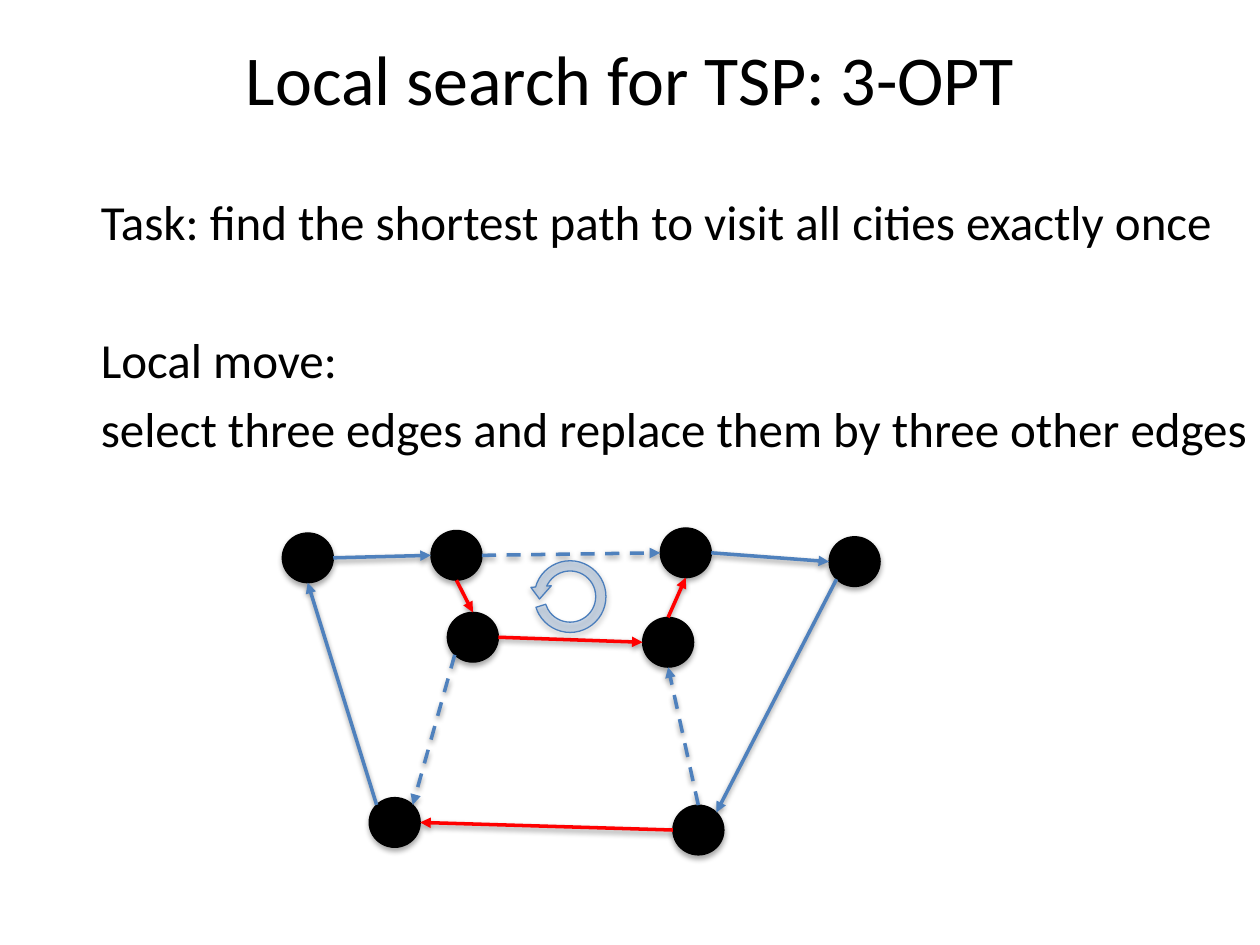
from math import cos, radians, sin

from lxml import etree
from pptx import Presentation
from pptx.dml.color import RGBColor
from pptx.enum.dml import MSO_LINE
from pptx.enum.shapes import MSO_CONNECTOR, MSO_SHAPE
from pptx.enum.text import MSO_ANCHOR, MSO_AUTO_SIZE, PP_ALIGN
from pptx.oxml.ns import qn
from pptx.util import Inches, Pt

BLACK = RGBColor(0x00, 0x00, 0x00)
BLUE = RGBColor(0x4F, 0x81, 0xBD)
OUTLINE_BLUE = RGBColor(0x4B, 0x7E, 0xBC)
RED = RGBColor(0xFF, 0x00, 0x00)
OVAL, TURN = MSO_SHAPE.OVAL, MSO_SHAPE.CIRCULAR_ARROW
STRAIGHT, DASH = MSO_CONNECTOR.STRAIGHT, MSO_LINE.DASH

prs = Presentation()
prs.slide_width, prs.slide_height = Inches(10), Inches(7.5)
COL = prs.slide_width / 100
ROW = prs.slide_height / 75


def write(paragraph, text, size, align=None, before=0):
    paragraph.alignment = align
    paragraph.space_before = Pt(before)
    run = paragraph.add_run()
    run.text = text
    run.font.name = "Calibri"
    run.font.size = Pt(size)
    run.font.color.rgb = BLACK


def place(shape, left, top, width, height):
    """Position a shape in grid columns and rows."""
    shape.left, shape.top = round(left * COL), round(top * ROW)
    shape.width, shape.height = round(width * COL), round(height * ROW)


slide = prs.slides.add_slide(prs.slide_layouts[1])

heading, task = slide.placeholders
place(heading, 5, 2.6, 90, 7.1)
heading.text_frame.auto_size = MSO_AUTO_SIZE.NONE
heading.text_frame.vertical_anchor = MSO_ANCHOR.MIDDLE
write(heading.text_frame.paragraphs[0], "Local search for TSP: 3-OPT", 40,
      align=PP_ALIGN.CENTER)

place(task, 2, 9.7, 98, 61.6)
statement = task.text_frame
statement.auto_size = MSO_AUTO_SIZE.NONE
statement.margin_top = round(5.5 * ROW)
for number, (line, before) in enumerate([
    ("Task: find the shortest path to visit all cities exactly once", 0),
    ("Local move:", 45.4),
    ("select three edges and replace them by three other edges", 5.6),
]):
    paragraph = statement.add_paragraph() if number else statement.paragraphs[0]
    paragraph.level = 1
    write(paragraph, line, 28, before=before)
    properties = paragraph._p.get_or_add_pPr()
    properties.set("marL", str(round(5 * COL)))
    properties.set("indent", "0")
    etree.SubElement(properties, qn("a:buNone"))

# Cities: left and top in grid units
CITY_WIDTH, CITY_HEIGHT = 4.05, 3.95
cities = {
    "top right": (52.4, 41.9),
    "far left": (22.4, 42.3),
    "far right": (65.8, 42.6),
    "bottom left": (29.3, 63.3),
    "inner left": (35.5, 48.6),
    "top left": (34.2, 42.1),
    "bottom right": (53.4, 63.9),
    "inner right": (51, 49),
}
for left, top in cities.values():
    city = slide.shapes.add_shape(OVAL, 0, 0, 0, 0)
    place(city, left, top, CITY_WIDTH, CITY_HEIGHT)
    city.fill.solid()
    city.fill.fore_color.rgb = BLACK
    city.line.color.rgb = BLACK
    city.line.width = Pt(0.75)

# Edges run between points on the city rims; angles turn clockwise from the right
RIGHT, LOWER_RIGHT, BOTTOM, LOWER_LEFT = 0, 45, 90, 135
LEFT, UPPER_LEFT, TOP, UPPER_RIGHT = 180, 225, 270, 315
edges = [
    ("bottom left", UPPER_LEFT, "far left", BOTTOM, BLUE, None),
    ("far left", RIGHT, "top left", LEFT, BLUE, None),
    ("top left", RIGHT, "top right", LEFT, BLUE, DASH),
    ("top right", RIGHT, "far right", LEFT, BLUE, None),
    ("inner left", RIGHT, "inner right", LEFT, RED, None),
    ("bottom right", TOP, "inner right", BOTTOM, BLUE, DASH),
    ("far right", LOWER_LEFT, "bottom right", UPPER_RIGHT, BLUE, None),
    ("inner left", LOWER_LEFT, "bottom left", UPPER_RIGHT, BLUE, DASH),
    ("top left", BOTTOM, "inner left", TOP, RED, None),
    ("inner right", TOP, "top right", BOTTOM, RED, None),
    ("bottom right", LEFT, "bottom left", RIGHT, RED, None),
]
for start, start_angle, end, end_angle, color, dash in edges:
    ends = []
    for name, angle in ((start, start_angle), (end, end_angle)):
        left, top = cities[name]
        ends.append(round((left + CITY_WIDTH / 2 * (1 + cos(radians(angle)))) * COL))
        ends.append(round((top + CITY_HEIGHT / 2 * (1 + sin(radians(angle)))) * ROW))
    edge = slide.shapes.add_connector(STRAIGHT, *ends)
    edge.line.color.rgb = color
    edge.line.width = Pt(2)
    if dash:
        edge.line.dash_style = dash
    etree.SubElement(edge.line._get_or_add_ln(), qn("a:tailEnd"), type="triangle")

# Counter-clockwise arrow: the mirrored preset
rotation = slide.shapes.add_shape(TURN, 0, 0, 0, 0)
place(rotation, 42, 44.1, 6.5, 6.5)
for index, value in enumerate((0.125, 14.18, 204.58, 10.48, 0.125)):
    rotation.adjustments[index] = value
rotation._element.spPr.find(qn("a:xfrm")).set("flipH", "1")
rotation.fill.solid()
rotation.fill.fore_color.rgb = BLUE
fill_color = rotation._element.spPr.find(qn("a:solidFill")).find(qn("a:srgbClr"))
etree.SubElement(fill_color, qn("a:alpha"), val="24000")
rotation.line.color.rgb = OUTLINE_BLUE
rotation.line.width = Pt(0.75)

prs.save("out.pptx")
